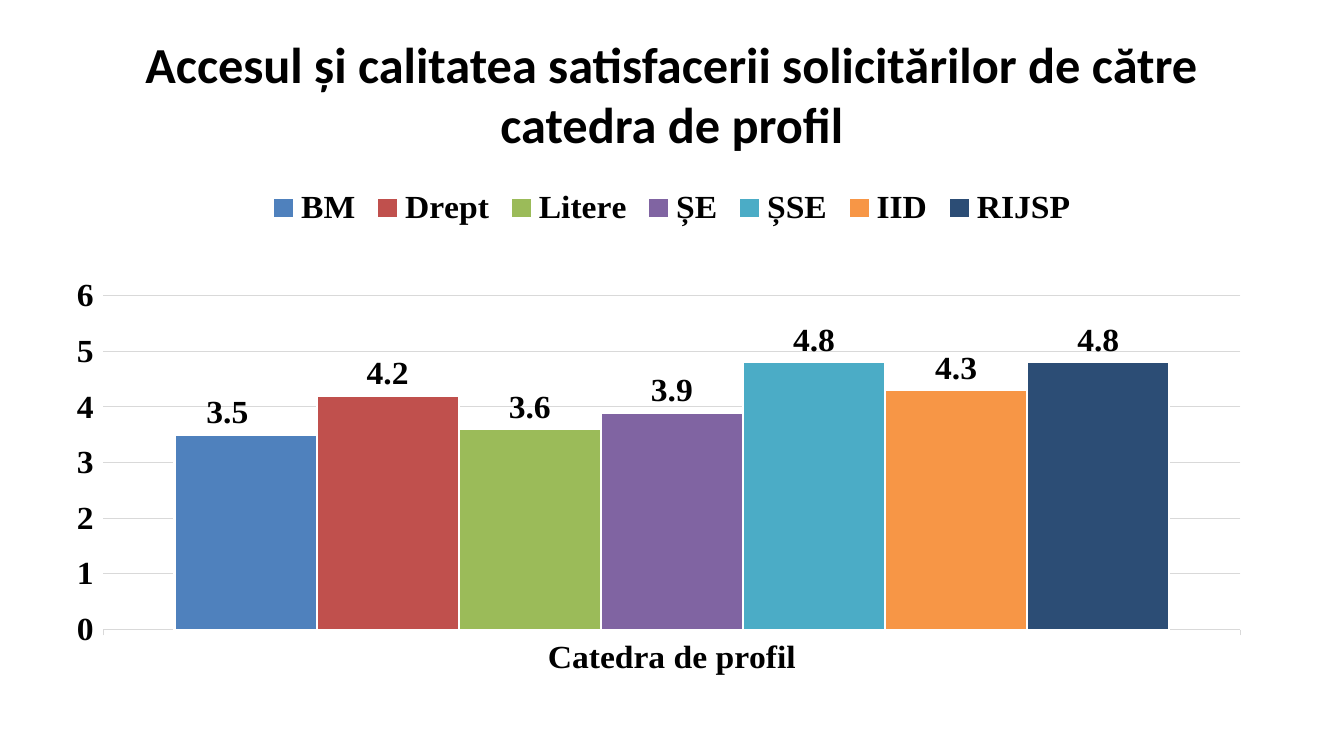
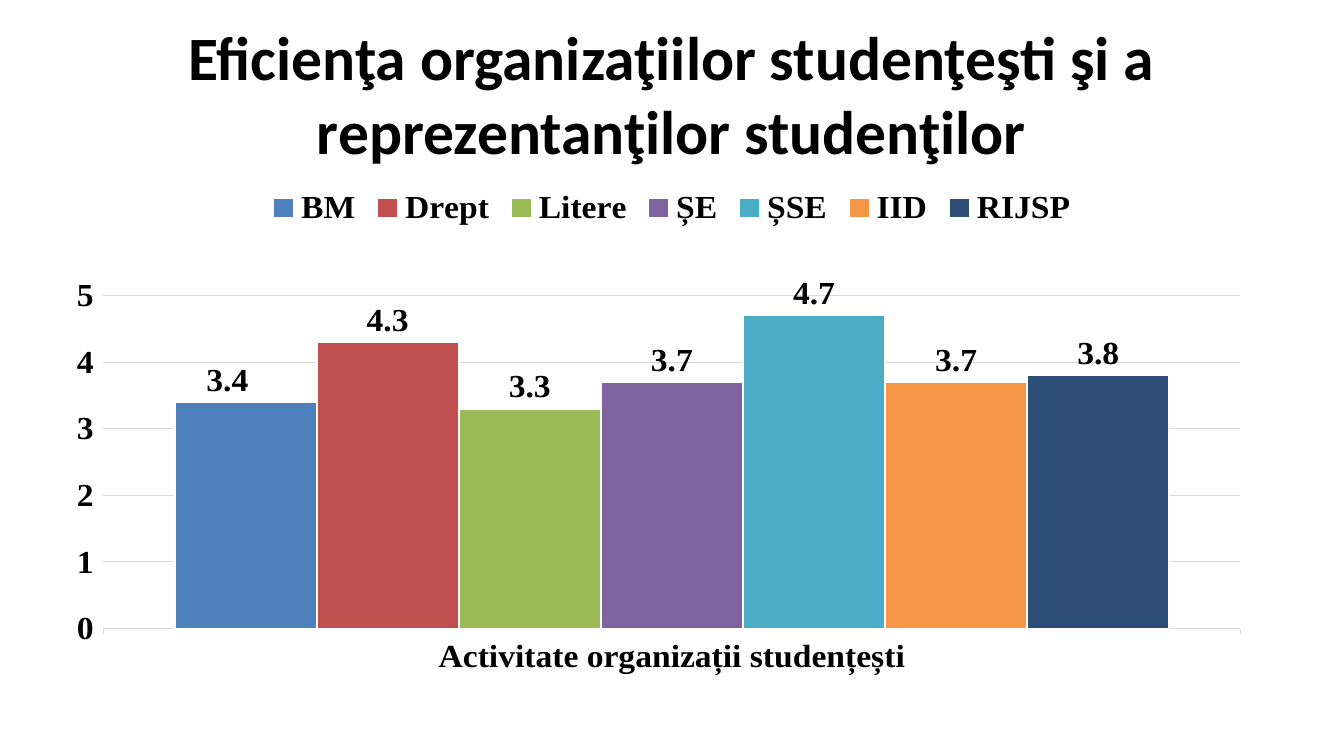
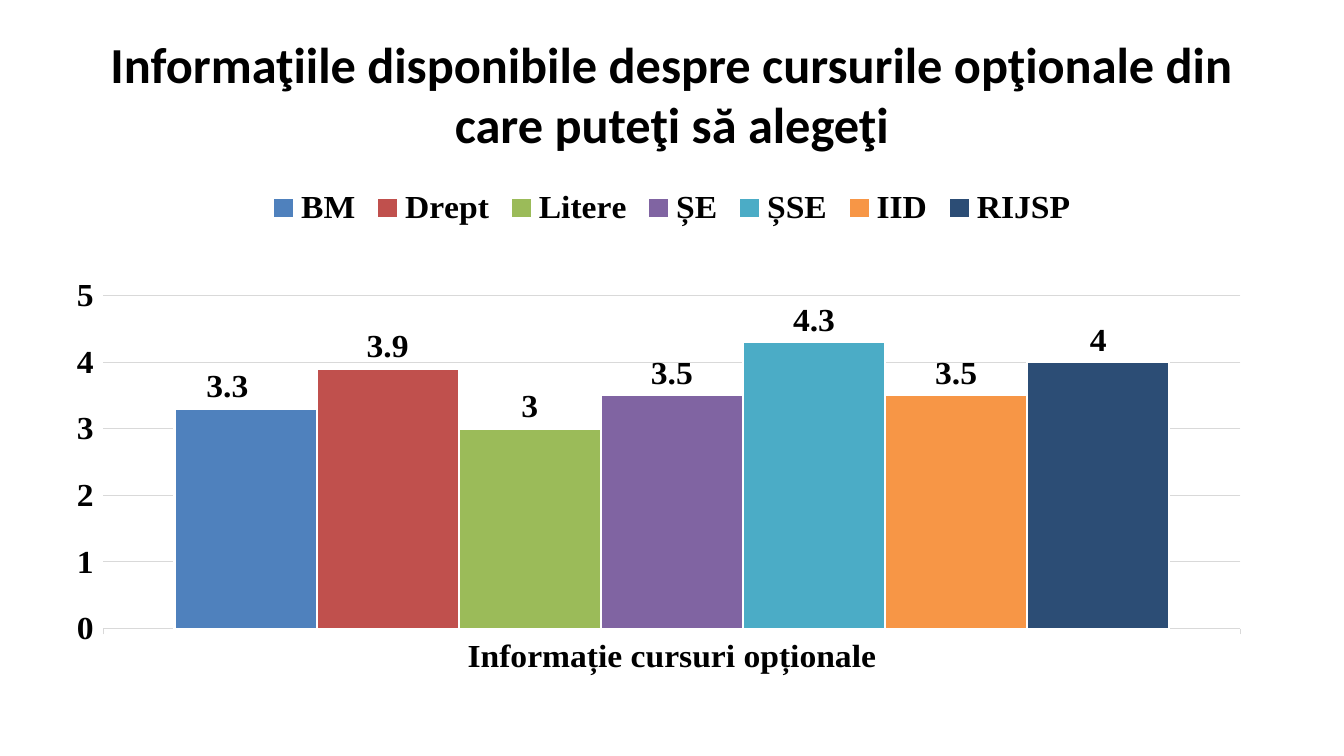
import pptx
import pptx.chart.data
import pptx.dml.color
import pptx.enum.chart
import pptx.enum.text
import pptx.oxml
import pptx.oxml.ns
import pptx.util

Pt = pptx.util.Pt
enum = pptx.enum.chart

# Content: title, title size, category, axis top, one value per group
GROUPS = [("BM", "4F81BD"), ("Drept", "C0504D"), ("Litere", "9BBB59"),
          ("ȘE", "8064A2"), ("ȘSE", "4BACC6"), ("IID", "F79646"),
          ("RIJSP", "2C4D75")]
SLIDES = [
    ("Accesul și calitatea satisfacerii solicitărilor de către catedra de profil",
     36, "Catedra de profil", 6, [3.5, 4.2, 3.6, 3.9, 4.8, 4.3, 4.8]),
    ("Eficienţa organizaţiilor studenţeşti şi a reprezentanţilor studenţilor",
     44, "Activitate organizații studențești", 5,
     [3.4, 4.3, 3.3, 3.7, 4.7, 3.7, 3.8]),
    ("Informaţiile disponibile despre cursurile opţionale din care puteţi să alegeţi",
     36, "Informație cursuri opționale", 5, [3.3, 3.9, 3, 3.5, 4.3, 3.5, 4]),
]

# Shared style
BLACK, WHITE, GREY = "000000", "FFFFFF", "D9D9D9"
WIDE, HIGH, EDGE = 960, 540, 48
TITLE = [Pt(n) for n in (EDGE, 21.6, WIDE - 2 * EDGE, 90)]
CHART = [Pt(n) for n in (EDGE, 126, WIDE - 2 * EDGE, 356.4)]
PLOT = {"x": 0.03, "y": 0.25, "w": 0.94, "h": 0.7}
NUDGE = {"x": -0.015, "y": 0}


def color(code):
    return pptx.dml.color.RGBColor.from_string(code)


def style(font, size, face="Times New Roman"):
    font.name, font.size, font.bold = face, Pt(size), True
    font.color.rgb = color(BLACK)


def stroke(line, code, width):
    line.color.rgb = color(code)
    line.width = Pt(width)


def layout(sizes, inner=False):
    modes = {"layoutTarget": "inner", "xMode": "edge", "yMode": "edge"} if inner else {}
    parts = "".join(f'<c:{tag} val="{val}"/>' for tag, val in {**modes, **sizes}.items())
    return pptx.oxml.parse_xml(
        f'<c:layout {pptx.oxml.ns.nsdecls("c")}><c:manualLayout>{parts}'
        '</c:manualLayout></c:layout>')


def add_title(slide, text, size):
    frame = slide.shapes.add_textbox(*TITLE).text_frame
    frame.word_wrap = True
    frame.vertical_anchor = pptx.enum.text.MSO_ANCHOR.MIDDLE
    frame.text = text
    para = frame.paragraphs[0]
    para.alignment = pptx.enum.text.PP_ALIGN.CENTER
    style(para.runs[0].font, size, "Calibri")


def add_bars(slide, label, top, values):
    data = pptx.chart.data.CategoryChartData()
    data.categories = [label]
    for (name, _), value in zip(GROUPS, values):
        data.add_series(name, [value])
    chart = slide.shapes.add_chart(
        enum.XL_CHART_TYPE.COLUMN_CLUSTERED, *CHART, data).chart
    chart.has_title = False
    style(chart.font, 24)

    # Legend
    chart.has_legend = True
    chart.legend.position = enum.XL_LEGEND_POSITION.TOP
    chart.legend.include_in_layout = False
    style(chart.legend.font, 24)

    # Axes
    for axis in (chart.category_axis, chart.value_axis):
        axis.major_tick_mark = enum.XL_TICK_MARK.OUTSIDE
        style(axis.tick_labels.font, 24)
    stroke(chart.category_axis.format.line, GREY, 0.75)
    scale = chart.value_axis
    scale.minimum_scale, scale.maximum_scale, scale.major_unit = 0, top, 1
    scale.format.line.fill.background()
    stroke(scale.major_gridlines.format.line, GREY, 0.75)

    # Bars and their labels
    plot = chart.plots[0]
    plot.gap_width, plot.overlap, plot.vary_by_categories = 100, 0, False
    for bar, (_, code) in zip(plot.series, GROUPS):
        bar.format.fill.solid()
        bar.format.fill.fore_color.rgb = color(code)
        stroke(bar.format.line, WHITE, 1.5)
        bar.data_labels.show_value = True
        bar.data_labels.position = enum.XL_LABEL_POSITION.OUTSIDE_END
        style(bar.data_labels.font, 24)

    # The first label sits a little to the left
    first = plot.series[0].points[0].data_label
    first.position = enum.XL_LABEL_POSITION.OUTSIDE_END
    style(first.font, 24)
    node = chart.element.find(".//" + pptx.oxml.ns.qn("c:dLbl"))
    node.insert(1, layout(NUDGE))

    # Fixed plot area
    area = chart.element.find(".//" + pptx.oxml.ns.qn("c:plotArea"))
    for old in area.findall(pptx.oxml.ns.qn("c:layout")):
        area.remove(old)
    area.insert(0, layout(PLOT, inner=True))


def main():
    deck = pptx.Presentation()
    deck.slide_width, deck.slide_height = Pt(WIDE), Pt(HIGH)
    for title, size, label, top, values in SLIDES:
        slide = deck.slides.add_slide(deck.slide_layouts[6])
        add_title(slide, title, size)
        add_bars(slide, label, top, values)
    deck.save("out.pptx")


if __name__ == "__main__":
    main()
